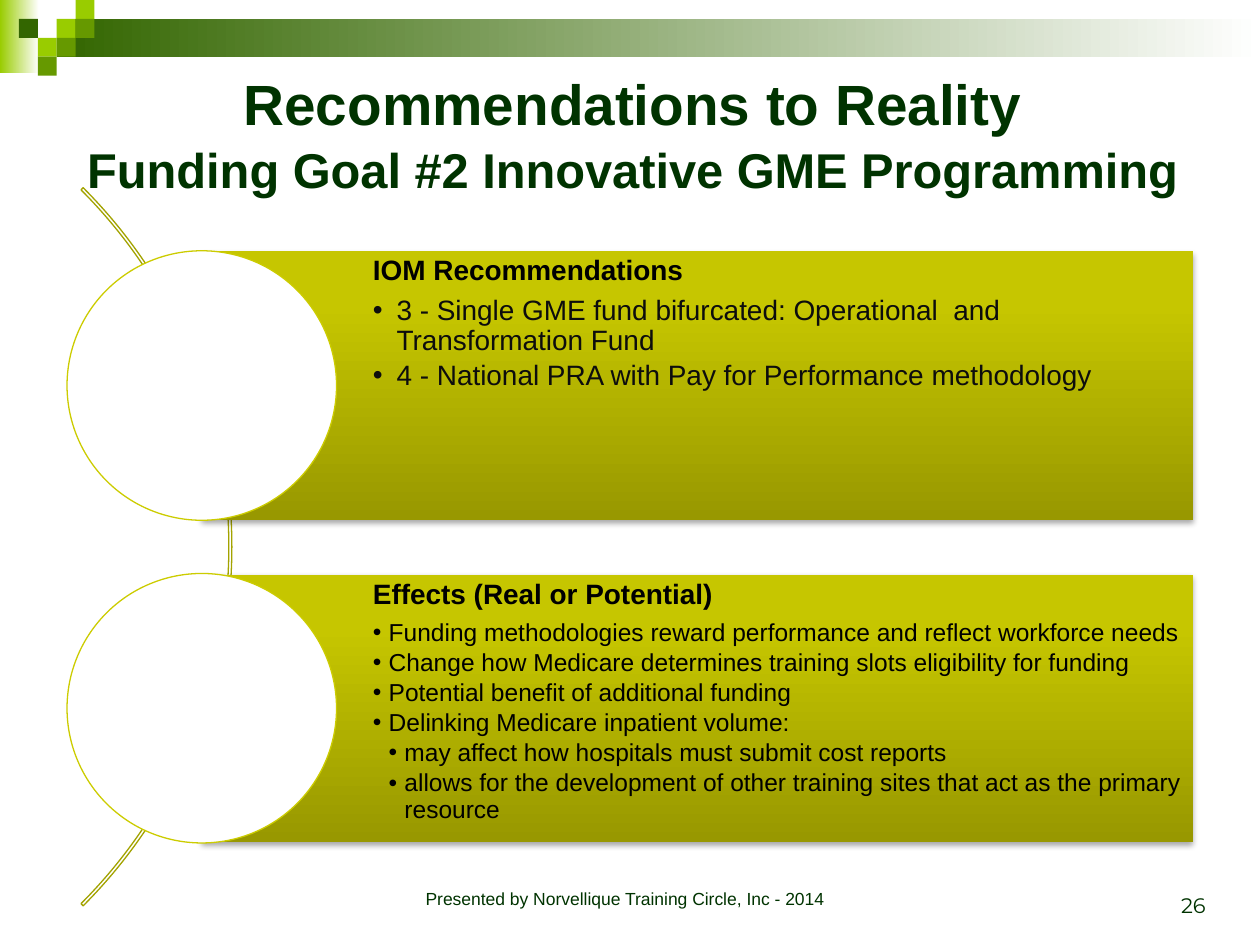
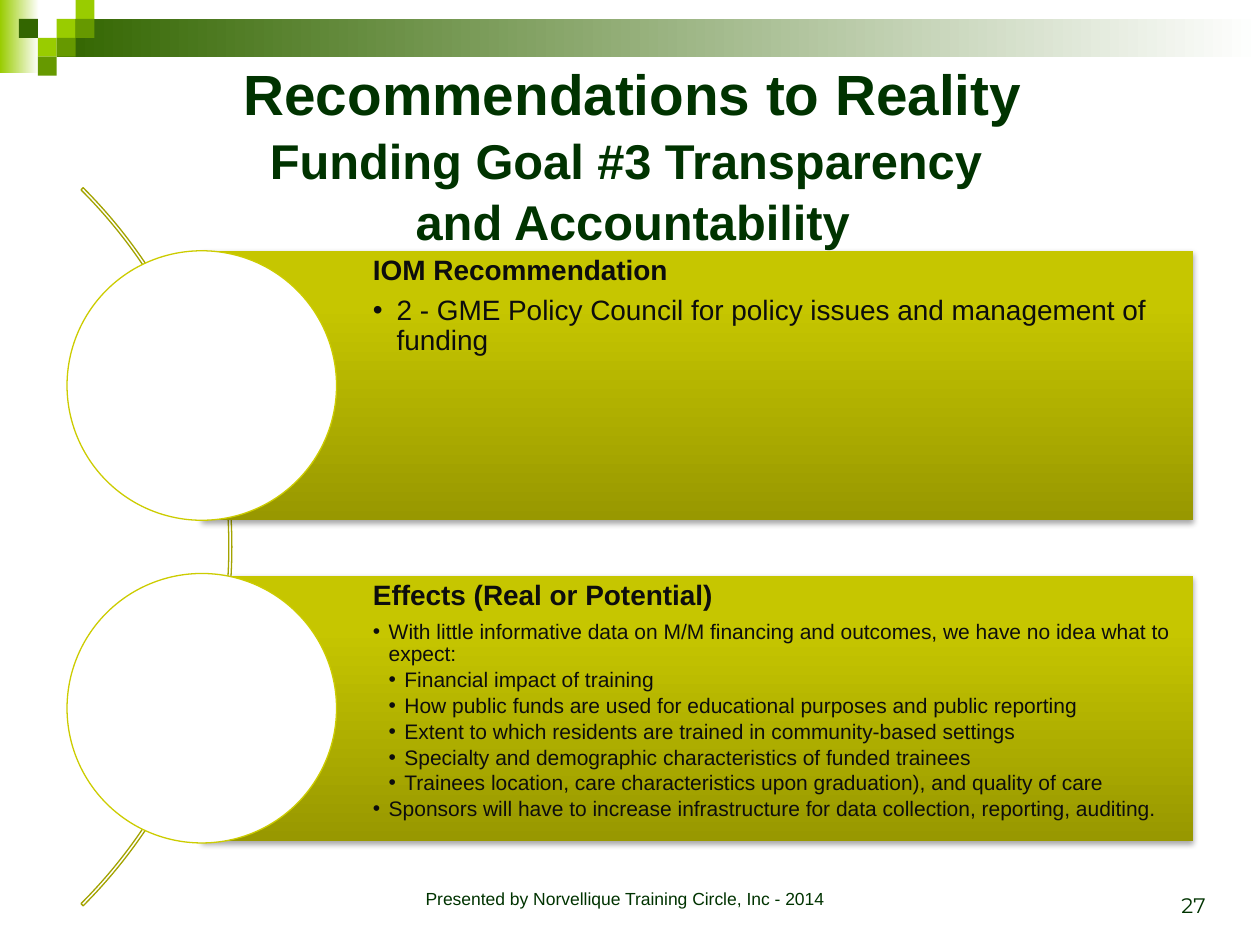
from lxml.etree import SubElement
from pptx import Presentation
from pptx.dml.color import RGBColor
from pptx.enum.shapes import MSO_SHAPE as Preset
from pptx.enum.text import MSO_ANCHOR as Anchor, MSO_AUTO_SIZE as AutoSize, PP_ALIGN as Align
from pptx.oxml.ns import qn
from pptx.util import Pt

FOOTER = "Presented by Norvellique Training Circle, Inc - 2014"
HEADLINE = "Recommendations to Reality"

SLIDES = [
    {
        "number": "26",
        "title_top": 23,
        "goal": ["Funding Goal #2 Innovative GME Programming"],
        "panels": [
            {
                "heading": "IOM Recommendations", "height": 153.4, "size": 16, "step": 13.5,
                "colours": ("000000", "0D0D0D"),
                "points": [
                    (1, "3 - Single GME fund bifurcated: Operational  and Transformation Fund"),
                    (1, "4 - National PRA with Pay for Performance methodology"),
                ],
            },
            {
                "heading": "Effects (Real or Potential)", "height": 152.6, "size": 14, "step": 9,
                "colours": ("000000", "000000"),
                "points": [
                    (1, "Funding methodologies reward performance and reflect workforce needs"),
                    (1, "Change how Medicare determines training slots eligibility for funding"),
                    (1, "Potential benefit of additional funding"),
                    (1, "Delinking Medicare inpatient volume:"),
                    (2, "may affect how hospitals must submit cost reports"),
                    (2, "allows for the development of other training sites that act as the primary resource"),
                ],
            },
        ],
    },
    {
        "number": "27",
        "title_top": 35.3,
        "goal": ["Funding Goal #3 Transparency ", "and Accountability"],
        "panels": [
            {
                "heading": "IOM Recommendation", "height": 154, "size": 16, "step": 13.5,
                "colours": ("0D0D0D", "0D0D0D"),
                "points": [
                    (1, "2 - GME Policy Council for policy issues and management of funding"),
                ],
            },
            {
                "heading": "Effects (Real or Potential)", "height": 151.4, "size": 12, "step": 9,
                "colours": ("0D0D0D", "0D0D0D"),
                "points": [
                    (1, "With little informative data on M/M financing and outcomes, we have no idea what to expect:"),
                    (2, "Financial impact of training"),
                    (2, "How public funds are used for educational purposes and public reporting"),
                    (2, "Extent to which residents are trained in community-based settings"),
                    (2, "Specialty and demographic characteristics of funded trainees"),
                    (2, "Trainees location, care characteristics upon graduation), and quality of care"),
                    (1, "Sponsors will have to increase infrastructure for data collection, reporting, auditing."),
                ],
            },
        ],
    },
]

DARK_TEXT, WHITE = "003300", "FFFFFF"
DEEP, MID, LIME = "336600", "669900", "99CC00"
OLIVE, ARC_LINE = "CCCC00", "A3A300"
PANEL_STOPS = [(0, "989800"), (80, "C6C600"), (100, "C7C700")]

TILE = 10.8
TILES = [(2, 1, LIME), (3, 0, LIME), (3, 1, MID), (1, 2, LIME),
         (0, 1, DEEP), (2, 2, MID), (1, 3, MID)]
BANDS = [((0, 0, 22.3, 41.8), LIME), ((32.4, TILE, 687.6, 21.6), DEEP)]

PANEL_LEFT, PANEL_WIDTH = 115.5, 566.5
PANEL_CENTRES = (220.3, 404.7)
CIRCLE_LEFT, CIRCLE_SIZE = 38.3, 154
ARC_BOX = (-447.8, 22.3, 580.3, 580.3)
ARC_ADJUSTMENTS = (189, 27, 0.003)


def rgb(colour):
    return RGBColor.from_string(colour)


def place(part, left, top, width, height):
    part.left, part.top, part.width, part.height = map(Pt, (left, top, width, height))


def add_run(paragraph, text, size, colour, bold=False, font="Arial"):
    run = paragraph.add_run()
    run.text = text
    run.font.name, run.font.size, run.font.bold = font, Pt(size), bold
    run.font.color.rgb = rgb(colour)


def add_preset(slide, preset, box, fill=None, line=None):
    part = slide.shapes.add_shape(preset, *map(Pt, box))
    part.shadow.inherit = False
    if fill:
        part.fill.solid()
        part.fill.fore_color.rgb = rgb(fill)
    else:
        part.fill.background()
    if line:
        part.line.color.rgb = rgb(line)
        part.line.width = Pt(0.75)
    else:
        part.line.fill.background()
    return part


def set_gradient(part, stops, angle):
    part.fill.gradient()
    part.fill.gradient_angle = angle
    stop_list = part.element.spPr.find(".//" + qn("a:gsLst"))
    for old_stop in list(stop_list):
        stop_list.remove(old_stop)
    for position, colour in stops:
        stop = SubElement(stop_list, qn("a:gs"), pos=str(position * 1000))
        SubElement(stop, qn("a:srgbClr"), val=colour)


def add_soft_shadow(part):
    effects = SubElement(part.element.spPr, qn("a:effectLst"))
    shadow = SubElement(effects, qn("a:outerShdw"), blurRad=str(Pt(3.1)), dist=str(Pt(1.8)),
                        dir="5400000", rotWithShape="0")
    colour = SubElement(shadow, qn("a:srgbClr"), val="000000")
    SubElement(colour, qn("a:alpha"), val="35000")


def set_bullet(paragraph, level, step):
    properties = paragraph._p.get_or_add_pPr()
    properties.set("marL", str(Pt(step * level)))
    properties.set("indent", str(-Pt(step) if level else 0))
    if level:
        SubElement(properties, qn("a:buFont"), typeface="Arial")
        SubElement(properties, qn("a:buChar"), char="•")
    else:
        SubElement(properties, qn("a:buNone"))


def add_bands(slide):
    for box, colour in BANDS:
        band = add_preset(slide, Preset.RECTANGLE, box, colour)
        set_gradient(band, [(0, colour), (100, WHITE)], 0)
    for column, row, colour in TILES:
        box = (TILE * (column + 1), TILE * row, TILE, TILE)
        add_preset(slide, Preset.RECTANGLE, box, colour)


def add_label(slide, text, box, size, font, align, anchor):
    label = slide.shapes.add_textbox(*map(Pt, box))
    frame = label.text_frame
    frame.word_wrap, frame.vertical_anchor = True, anchor
    paragraph = frame.paragraphs[0]
    paragraph.alignment = align
    add_run(paragraph, text, size, DARK_TEXT, font=font)


def fill_title(title, top, goal):
    place(title, 23.8, top, 675.4, 104.4)
    frame = title.text_frame
    frame.auto_size, frame.vertical_anchor = AutoSize.NONE, Anchor.MIDDLE
    paragraph = frame.paragraphs[0]
    paragraph.alignment, paragraph.line_spacing = Align.CENTER, 1.05
    add_run(paragraph, HEADLINE, 32.4, DARK_TEXT, True)
    for line in goal:
        paragraph.add_line_break()
        add_run(paragraph, line, 27.9, DARK_TEXT, True)


def fill_panel(panel, content, centre):
    height = content["height"]
    place(panel, PANEL_LEFT, centre - height / 2, PANEL_WIDTH, height)
    set_gradient(panel, PANEL_STOPS, 90)
    add_soft_shadow(panel)
    frame = panel.text_frame
    frame.auto_size, frame.vertical_anchor, frame.word_wrap = AutoSize.NONE, Anchor.TOP, True
    frame.margin_left = Pt(97.6)
    frame.margin_top = frame.margin_right = frame.margin_bottom = Pt(3)

    heading_colour, point_colour = content["colours"]
    lines = [(0, content["heading"], 16, heading_colour)]
    lines += [(level, text, content["size"], point_colour) for level, text in content["points"]]
    for index, (level, text, size, colour) in enumerate(lines):
        paragraph = frame.add_paragraph() if index else frame.paragraphs[0]
        paragraph.level = level
        paragraph.alignment, paragraph.line_spacing = Align.LEFT, 0.9
        paragraph.space_before = Pt(0)
        paragraph.space_after = Pt(size * (0.15 if level else 0.35))
        set_bullet(paragraph, level, content["step"])
        add_run(paragraph, text, size, colour, not level)


def build_slide(prs, content):
    slide = prs.slides.add_slide(prs.slide_layouts[3])
    title, *panels = slide.placeholders
    add_bands(slide)
    fill_title(title, content["title_top"], content["goal"])

    arc = add_preset(slide, Preset.BLOCK_ARC, ARC_BOX, line=ARC_LINE)
    for index, value in enumerate(ARC_ADJUSTMENTS):
        arc.adjustments[index] = value
    panels[0].element.addprevious(arc.element)

    for panel, panel_content, centre in zip(panels, content["panels"], PANEL_CENTRES):
        fill_panel(panel, panel_content, centre)
        circle_box = (CIRCLE_LEFT, centre - CIRCLE_SIZE / 2, CIRCLE_SIZE, CIRCLE_SIZE)
        add_preset(slide, Preset.OVAL, circle_box, WHITE, OLIVE)

    add_label(slide, FOOTER, (198, 504, 318, 24), 10, "Arial", Align.CENTER, Anchor.TOP)
    add_label(slide, content["number"], (528, 492, 168, 36), 12, "Montserrat",
              Align.RIGHT, Anchor.BOTTOM)


def main():
    prs = Presentation()
    prs.slide_width, prs.slide_height = Pt(720), Pt(540)
    for content in SLIDES:
        build_slide(prs, content)
    prs.save("out.pptx")


if __name__ == "__main__":
    main()
